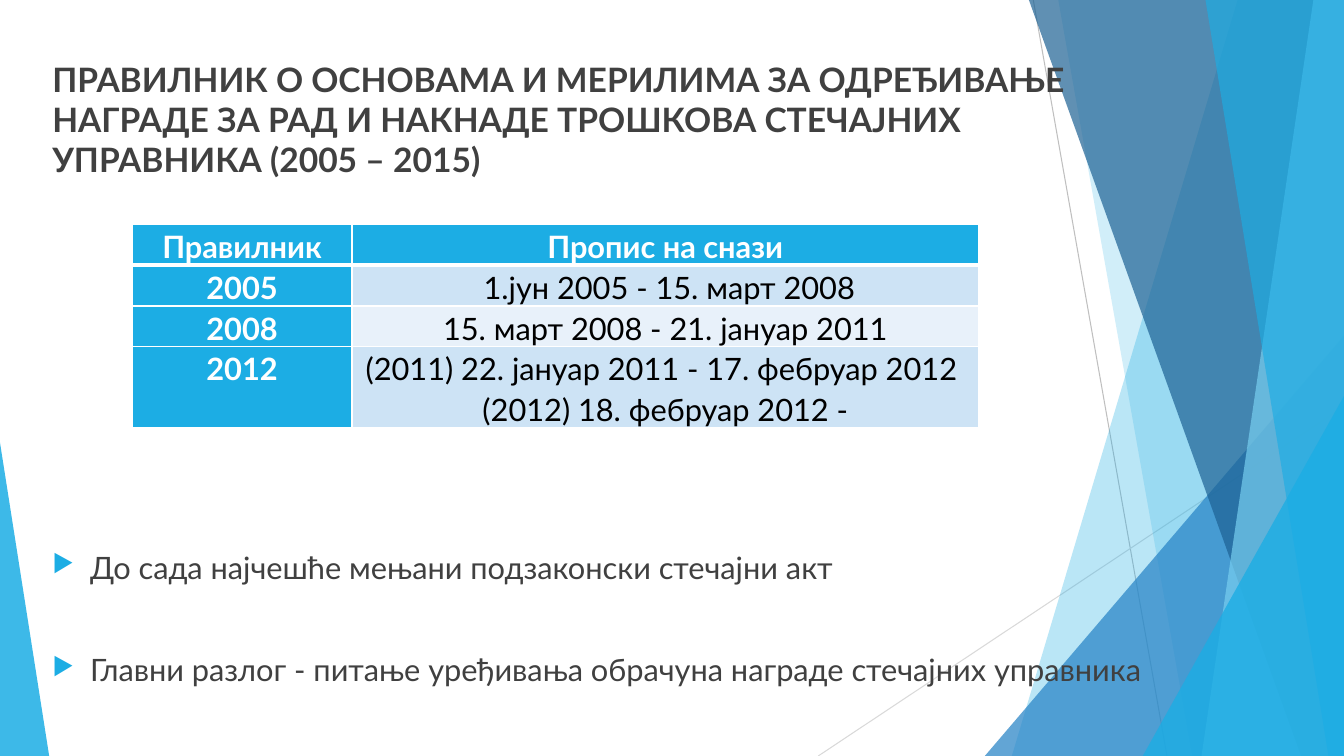
from dataclasses import dataclass

from lxml.etree import SubElement
from pptx import Presentation
from pptx.dml.color import RGBColor
from pptx.enum.shapes import MSO_CONNECTOR as CONN, MSO_SHAPE as SHAPE
from pptx.enum.text import PP_ALIGN as ALIGN
from pptx.oxml.ns import qn
from pptx.util import Cm, Pt


@dataclass(frozen=True)
class Theme:
    font: str = "Lato"
    title: float = 24
    body: float = 22
    text: str = "404040"
    black: str = "000000"
    white: str = "FFFFFF"
    accent: str = "1CADE4"
    blue: str = "2683C6"
    navy: str = "1D6294"
    sky: str = "77CEEF"
    bands: tuple = ("CDE3F5", "E8F1FA")
    lines: tuple = ("BFBFBF", "D9D9D9")


T = Theme()
TITLE = ("ПРАВИЛНИК О ОСНОВАМА И МЕРИЛИМА ЗА ОДРЕЂИВАЊЕ НАГРАДЕ ЗА РАД "
         "И НАКНАДЕ ТРОШКОВА СТЕЧАЈНИХ УПРАВНИКА (2005 – 2015)")
RULES = [
    ("Правилник", ["Пропис на снази"]),
    ("2005", [" 1.јун 2005 - 15. март 2008"]),
    ("2008", ["15. март 2008 - 21. јануар 2011"]),
    ("2012", ["(2011) 22. јануар 2011 - 17. фебруар 2012 ",
              "(2012) 18. фебруар 2012 -"]),
]
POINTS = [
    "До сада најчешће мењани подзаконски стечајни акт",
    "Главни разлог - питање уређивања обрачуна награде стечајних управника",
]


def add_text(p, text, size=T.body, color=T.text, bold=False,
             align=ALIGN.LEFT, before=0, spacing=None):
    p.alignment = align
    p.space_before = Pt(before)
    if spacing:
        p.line_spacing = spacing
    r = p.add_run()
    r.text = text
    r.font.name = T.font
    r.font.size = Pt(size)
    r.font.bold = bold
    r.font.color.rgb = RGBColor.from_string(color)


def add_bullet(p, char="▶", indent=Cm(0.95)):
    pPr = p._p.get_or_add_pPr()
    pPr.set("marL", str(indent))
    pPr.set("indent", str(-indent))
    clr = SubElement(pPr, qn("a:buClr"))
    SubElement(clr, qn("a:srgbClr"), val=T.accent)
    SubElement(pPr, qn("a:buSzPct"), val="80000")
    SubElement(pPr, qn("a:buChar"), char=char)


def add_frame(s, x, y, w, h):
    tf = s.shapes.add_textbox(Cm(x), Cm(y), Cm(w), Cm(h)).text_frame
    tf.word_wrap = True
    return tf


def paint(sp, color, alpha):
    sp.shadow.inherit = False
    sp.fill.solid()
    sp.fill.fore_color.rgb = RGBColor.from_string(color)
    sp.line.fill.background()
    clr = sp._element.spPr.find(".//" + qn("a:srgbClr"))
    SubElement(clr, qn("a:alpha"), val=str(alpha * 1000))


def add_facet(s, right, h, top, bottom, color, alpha):
    fb = s.shapes.build_freeform(Cm(right - top), 0)
    fb.add_line_segments([(Cm(right), 0), (Cm(right), Cm(h)),
                          (Cm(right - bottom), Cm(h))])
    paint(fb.convert_to_shape(), color, alpha)


def add_corner(s, x, bottom, w, h, apex, color, alpha):
    sp = s.shapes.add_shape(SHAPE.ISOSCELES_TRIANGLE, Cm(x), Cm(bottom - h),
                            Cm(w), Cm(h))
    sp.adjustments[0] = apex
    paint(sp, color, alpha)


def add_line(s, x1, y1, x2, y2, color):
    c = s.shapes.add_connector(CONN.STRAIGHT, Cm(x1), Cm(y1), Cm(x2), Cm(y2))
    c.line.color.rgb = RGBColor.from_string(color)
    c.line.width = Pt(0.75)
    SubElement(c._element.spPr, qn("a:effectLst"))


def add_backdrop(s, w, h):
    add_line(s, w - 7.83, 0, w - 4.46, h, T.lines[0])
    add_line(s, w, 10.24, w - 13.25, h, T.lines[1])
    add_facet(s, w, h, 2.68, 8.37, T.accent, 30)
    add_facet(s, w, h, 7.2, 3.82, T.accent, 20)
    add_corner(s, w - 9.05, h, 9.05, 10.59, 1, T.blue, 72)
    add_facet(s, w, h, 7.94, 1.08, T.navy, 70)
    add_facet(s, w, h, 0.77, 3.59, T.sky, 70)
    add_facet(s, w, h, 3.49, 0.39, T.accent, 65)
    add_corner(s, w - 5.07, h, 5.07, 9.07, 1, T.accent, 80)
    add_corner(s, 0, h, 1.24, 7.9, 0, T.accent, 85)


def add_title(s, x, y, w, h):
    add_text(add_frame(s, x, y, w, h).paragraphs[0], TITLE, size=T.title,
             bold=True)


def add_points(s, x, y, w, h):
    tf = add_frame(s, x, y, w, h)
    for i, point in enumerate(POINTS):
        p = tf.paragraphs[0] if i == 0 else tf.add_paragraph()
        add_text(p, point, before=46.5 if i else 0)
        add_bullet(p)


def set_borders(cell, header, below_header):
    tcPr = cell._tc.get_or_add_tcPr()
    widths = {"lnL": 1, "lnR": 1, "lnT": 3 if below_header else 1,
              "lnB": 3 if header else 1}
    for i, (side, width) in enumerate(widths.items()):
        ln = tcPr.makeelement(qn("a:" + side), {"w": str(Pt(width))})
        fill = SubElement(ln, qn("a:solidFill"))
        SubElement(fill, qn("a:srgbClr"), val=T.white)
        tcPr.insert(i, ln)


def fill_cell(cell, lines, row, strong):
    cell.margin_left = cell.margin_right = Cm(0.18)
    cell.margin_top = cell.margin_bottom = 0
    cell.fill.solid()
    color = T.accent if strong else T.bands[(row - 1) % 2]
    cell.fill.fore_color.rgb = RGBColor.from_string(color)
    tf = cell.text_frame
    for i, line in enumerate(lines):
        p = tf.paragraphs[0] if i == 0 else tf.add_paragraph()
        add_text(p, line, color=T.white if strong else T.black, bold=strong,
                 align=ALIGN.CENTER, spacing=1.1)
    set_borders(cell, row == 0, row == 1)


def add_rules(s, x, y, w, line_h, first_w):
    total = sum(len(lines) for _, lines in RULES)
    table = s.shapes.add_table(len(RULES), 2, Cm(x), Cm(y), Cm(w),
                               Cm(total * line_h)).table
    table.columns[0].width = Cm(first_w)
    table.columns[1].width = Cm(w - first_w)
    for row, (year, lines) in enumerate(RULES):
        table.rows[row].height = Cm(line_h * len(lines))
        fill_cell(table.cell(row, 0), [year], row, True)
        fill_cell(table.cell(row, 1), lines, row, row == 0)


def main():
    prs = Presentation()
    w, h = 33.87, 19.05
    prs.slide_width, prs.slide_height = Cm(w), Cm(h)
    s = prs.slides.add_slide(prs.slide_layouts[6])
    add_backdrop(s, w, h)
    add_title(s, 1.07, 1.35, 28, 3.4)
    add_points(s, 1.07, 13.7, 28.2, 3.9)
    add_rules(s, 3.33, 5.66, 21.33, 1.02, 5.54)
    prs.save("out.pptx")


if __name__ == "__main__":
    main()
